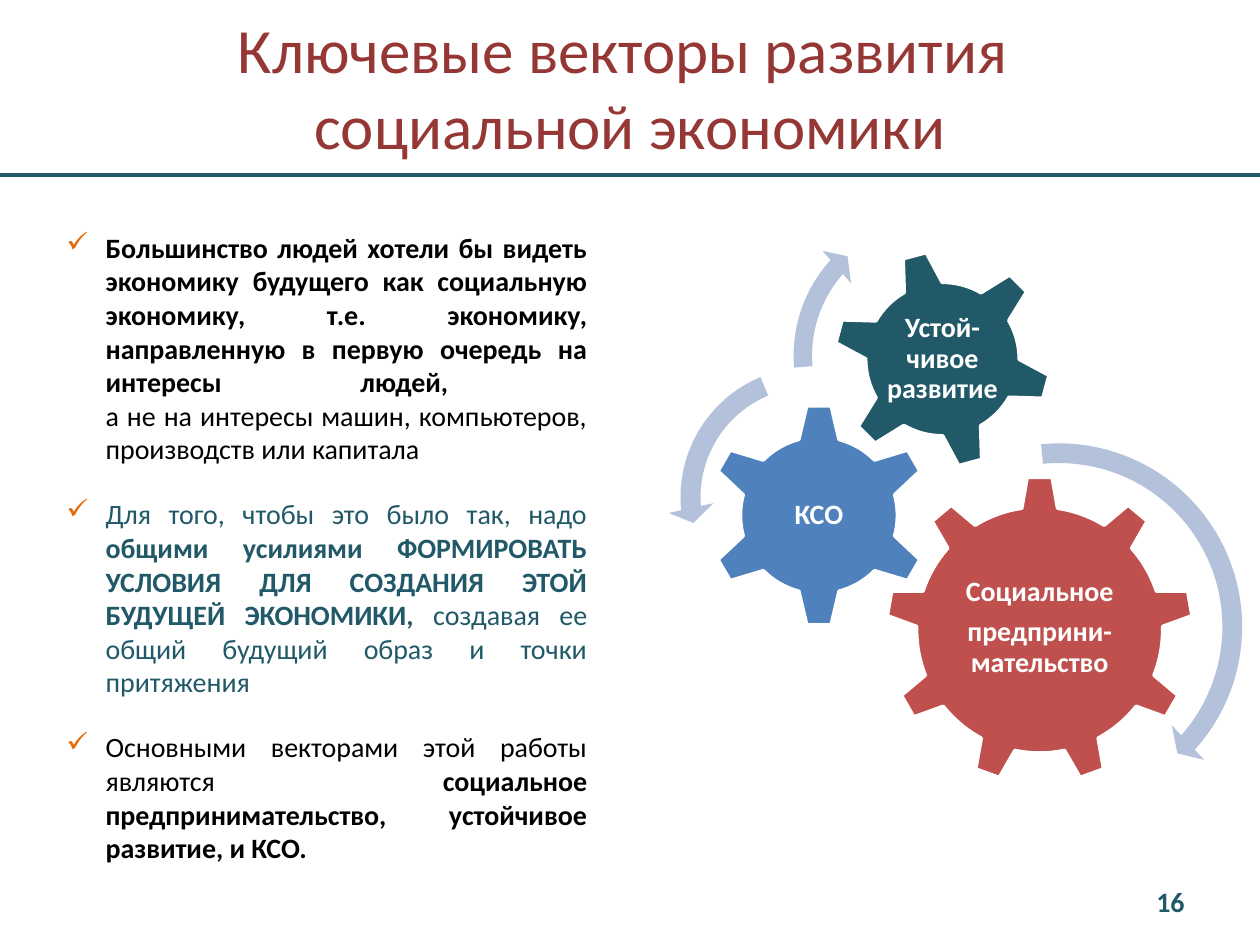
from dataclasses import dataclass

import pptx
import pptx.dml.color
import pptx.enum.shapes
import pptx.enum.text
import pptx.oxml.ns
import pptx.util
from lxml import etree

Cm = pptx.util.Cm
Pt = pptx.util.Pt
SHAPE = pptx.enum.shapes.MSO_SHAPE
ALIGN = pptx.enum.text.PP_ALIGN
ANCHOR = pptx.enum.text.MSO_ANCHOR
qn = pptx.oxml.ns.qn


@dataclass(frozen=True)
class Theme:
    font: str = "Calibri"
    title_size: int = 36
    text_size: int = 16
    title: str = "953735"
    teal: str = "215968"
    black: str = "000000"
    white: str = "FFFFFF"
    red: str = "C0504D"
    blue: str = "4F81BD"
    arrow: str = "B3C1DB"
    bullet: str = "E46C0A"


def rgb(value):
    return pptx.dml.color.RGBColor.from_string(value)


class SlideBuilder:
    def __init__(self, slide, theme):
        self.slide = slide
        self.theme = theme

    def rule(self, top, width):
        line = self.slide.shapes.add_connector(
            pptx.enum.shapes.MSO_CONNECTOR.STRAIGHT, 0, Cm(top), Cm(width), Cm(top))
        line.line.color.rgb = rgb(self.theme.teal)
        line.line.width = Pt(2.25)
        etree.SubElement(line._element.spPr, qn("a:effectLst"))

    def text_box(self, left, top, width, height, anchor=ANCHOR.MIDDLE, inset=None):
        box = self.slide.shapes.add_textbox(Cm(left), Cm(top), Cm(width), Cm(height))
        frame = box.text_frame
        frame.word_wrap = True
        frame.vertical_anchor = anchor
        if inset is not None:
            frame.margin_left = frame.margin_right = Cm(inset)
            frame.margin_top = frame.margin_bottom = Cm(inset)
        return frame

    def paragraph(self, frame, first, align):
        paragraph = frame.paragraphs[0] if first else frame.add_paragraph()
        paragraph.alignment = align
        return paragraph

    def run(self, paragraph, text, color, bold=False, size=None):
        """Add a run; each newline in the text becomes a line break."""
        for index, part in enumerate(text.split("\n")):
            if index:
                paragraph.add_line_break()
            if part:
                run = paragraph.add_run()
                run.text = part
                run.font.name = self.theme.font
                run.font.size = Pt(size or self.theme.text_size)
                run.font.bold = bold
                run.font.color.rgb = rgb(color)

    def line_of_text(self, bounds, text, color, align, bold=False, size=None):
        frame = self.text_box(*bounds)
        self.run(self.paragraph(frame, True, align), text, color, bold, size)

    def check_list(self, bounds, items):
        frame = self.text_box(*bounds, anchor=ANCHOR.TOP)
        for index, (color, runs) in enumerate(items):
            paragraph = self.paragraph(frame, index == 0, ALIGN.JUSTIFY)
            paragraph.space_after = Pt(18)
            properties = paragraph._p.get_or_add_pPr()
            properties.set("marL", str(Cm(0.79)))
            properties.set("indent", str(Cm(-0.79)))
            bullet_color = etree.SubElement(properties, qn("a:buClr"))
            etree.SubElement(bullet_color, qn("a:srgbClr"), val=self.theme.bullet)
            etree.SubElement(properties, qn("a:buChar"), char="✓")
            for text, bold in runs:
                self.run(paragraph, text, color, bold)

    def preset(self, kind, left, top, size, color):
        shape = self.slide.shapes.add_shape(kind, Cm(left), Cm(top), Cm(size), Cm(size))
        shape.shadow.inherit = False
        shape.fill.solid()
        shape.fill.fore_color.rgb = rgb(color)
        return shape

    def gear(self, kind, left, top, size, color, label, label_size, rotation=0, rise=0):
        """Draw a gear with an upright label centred on it, lifted by rise."""
        gear = self.preset(kind, left, top, size, color)
        gear.line.color.rgb = rgb(self.theme.white)
        gear.line.width = Pt(2)
        gear.rotation = rotation
        width, height = label_size
        frame = self.text_box(left + (size - width) / 2, top + (size - height) / 2 - rise,
                              width, height, inset=0.05)
        for index, text in enumerate(label):
            paragraph = self.paragraph(frame, index == 0, ALIGN.CENTER)
            paragraph.line_spacing = 0.9
            paragraph.space_after = Pt(6)
            self.run(paragraph, text, self.theme.white, True)

    def turn_arrow(self, kind, left, top, size, adjustments):
        arrow = self.preset(kind, left, top, size, self.theme.arrow)
        arrow.line.fill.background()
        for index, value in enumerate(adjustments):
            arrow.adjustments[index] = value


def main():
    theme = Theme()
    deck = pptx.Presentation()
    deck.slide_width, deck.slide_height = Cm(25.4), Cm(19.05)
    builder = SlideBuilder(deck.slides.add_slide(deck.slide_layouts[6]), theme)

    builder.rule(3.53, 25.4)
    builder.line_of_text((1.27, 0.76, 22.86, 1.96),
                         "Ключевые векторы развития \nсоциальной экономики",
                         theme.title, ALIGN.CENTER, size=theme.title_size)
    builder.line_of_text((18.21, 17.65, 5.92, 1.02), "16", theme.teal, ALIGN.RIGHT, bold=True)

    builder.check_list((1.09, 4.52, 11, 13.16), [
        (theme.black, [
            ("Большинство людей хотели бы видеть экономику будущего как социальную "
             "экономику, т.е. экономику, направленную в первую очередь на интересы "
             "людей, \n", True),
            ("а не на интересы машин, компьютеров, производств или капитала", False)]),
        (theme.teal, [
            ("Для того, чтобы это было так, надо ", False),
            ("общими усилиями ФОРМИРОВАТЬ УСЛОВИЯ ДЛЯ СОЗДАНИЯ ЭТОЙ БУДУЩЕЙ "
             "ЭКОНОМИКИ, ", True),
            ("создавая ее общий будущий образ и точки притяжения", False)]),
        (theme.black, [
            ("Основными векторами этой работы являются ", False),
            ("социальное предпринимательство, устойчивое развитие, и КСО.", True)]),
    ])

    builder.gear(SHAPE.GEAR_9, 17.86, 9.6, 6.2, theme.red,
                 ["Социальное", "предприни-мательство"], (3.71, 3.2), rise=0.05)
    builder.gear(SHAPE.GEAR_6, 14.25, 8.13, 4.52, theme.blue, ["КСО"], (2.24, 2.24))
    builder.gear(SHAPE.GEAR_6, 16.79, 5.03, 4.42, theme.teal,
                 ["Устой-чивое развитие"], (2.49, 2.49), rotation=345)

    builder.turn_arrow(SHAPE.CIRCULAR_ARROW, 17.37, 8.66, 7.95,
                       (0.05, 2.99, 25.13, 158.68, 0.06))
    builder.turn_arrow(SHAPE.LEFT_CIRCULAR_ARROW, 13.46, 7.14, 5.77,
                       (0.07, 4.3, 104.89, 148.38, 0.08))
    builder.turn_arrow(SHAPE.CIRCULAR_ARROW, 15.75, 4.06, 6.22,
                       (0.06, 3.94, 133.14, 105.08, 0.07))

    deck.save("out.pptx")


if __name__ == "__main__":
    main()
